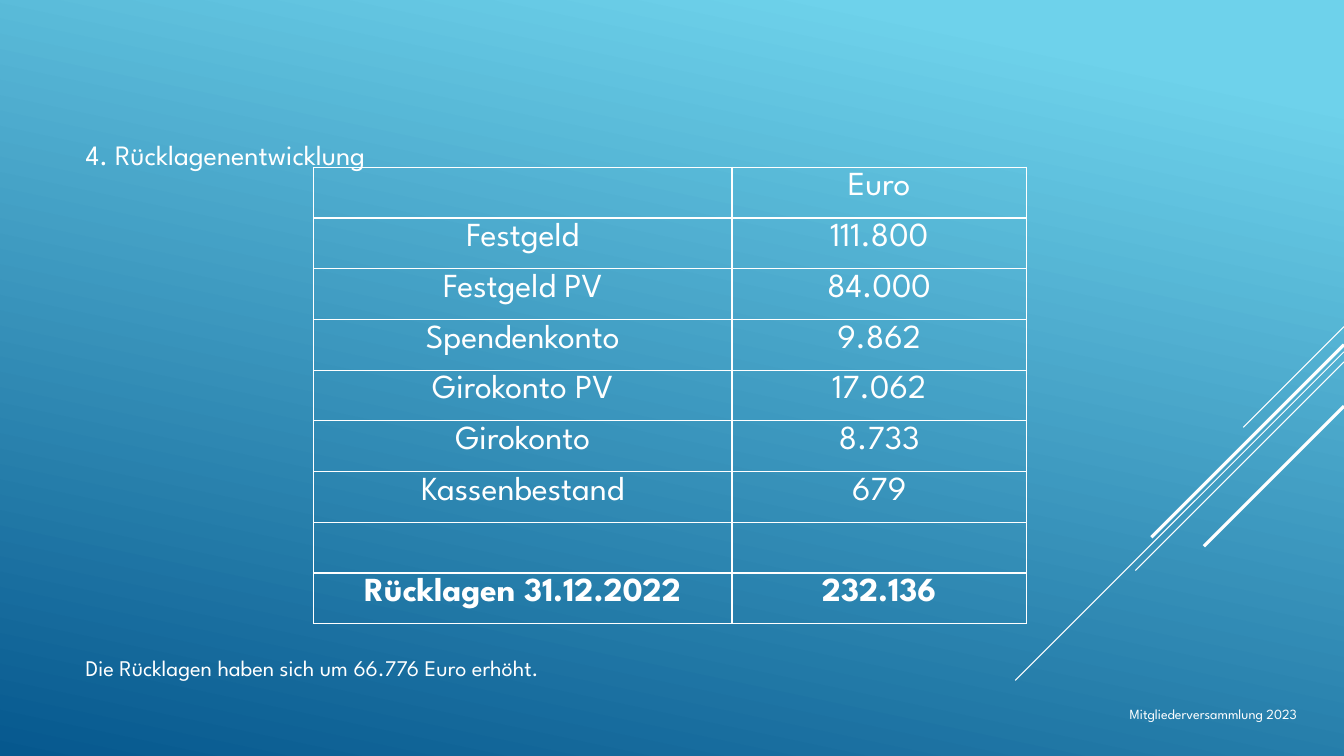
"""Build the slide on the development of reserves."""
from lxml.etree import SubElement
from pptx import Presentation
from pptx.dml.color import RGBColor as RGB
from pptx.enum.shapes import MSO_CONNECTOR as CONN
from pptx.enum.text import MSO_ANCHOR as ANCHOR, MSO_AUTO_SIZE as AUTO, PP_ALIGN as ALIGN
from pptx.oxml.ns import qn
from pptx.util import Inches, Pt

HEADING = "4. Rücklagenentwicklung"
NOTE = "Die Rücklagen haben sich um 66.776 Euro erhöht."
FOOTER = "Mitgliederversammlung 2023"
ROWS = [
    ("", "Euro"),
    ("Festgeld", "111.800"),
    ("Festgeld PV", "84.000"),
    ("Spendenkonto", "9.862"),
    ("Girokonto PV", "17.062"),
    ("Girokonto", "8.733"),
    ("Kassenbestand", "679"),
    ("", ""),
    ("Rücklagen 31.12.2022", "232.136"),
]
COL_WIDTHS = (4.15, 2.92)
TABLE_LEFT, TABLE_TOP, TABLE_HEIGHT = 3.11, 1.66, 4.53
SLIDE_W, SLIDE_H = 13.33, 7.5
STRIPES = [(3.24, 1.0, 0.75), (3.49, 3.26, 0.75), (3.59, 2.07, 0.75),
           (3.42, 1.91, 2.25), (4.03, 1.39, 2.25)]
COLORS = {"text": "FFFFFF", "line": "FFFFFF", "light": "6ED2EB", "dark": "06588E"}
FONT = "League Spartan"


def color(name):
    return RGB.from_string(COLORS[name])


def write(tf, text, size, align=ALIGN.LEFT, bold=False):
    p = tf.paragraphs[0]
    p.alignment = align
    p.space_before = Pt(0)
    r = p.add_run()
    r.text = text
    r.font.name, r.font.size, r.font.bold = FONT, Pt(size), bold
    r.font.color.rgb = color("text")
    return p


def place(sp, left, top, width, height):
    sp.left, sp.top = Inches(left), Inches(top)
    sp.width, sp.height = Inches(width), Inches(height)
    tf = sp.text_frame
    tf.word_wrap = True
    tf.auto_size = AUTO.NONE
    tf.vertical_anchor = ANCHOR.TOP
    return tf


def add_borders(cell):
    tc_pr = cell._tc.get_or_add_tcPr()
    for side in ("a:lnL", "a:lnR", "a:lnT", "a:lnB"):
        ln = SubElement(tc_pr, qn(side), w=str(Pt(1)))
        fill = SubElement(ln, qn("a:solidFill"))
        SubElement(fill, qn("a:srgbClr"), val=COLORS["line"])


def add_background(s):
    fill = s.background.fill
    fill.gradient()
    fill.gradient_angle = 258
    for stop, position, name in zip(fill.gradient_stops, (0.1, 1), ("light", "dark")):
        stop.position = position
        stop.color.rgb = color(name)


def add_stripes(s):
    for top, run, weight in STRIPES:
        line = s.shapes.add_connector(
            CONN.STRAIGHT, Inches(SLIDE_W), Inches(top),
            Inches(SLIDE_W - run), Inches(top + run))
        line.line.color.rgb = color("line")
        line.line.width = Pt(weight)
        SubElement(line._element.spPr, qn("a:effectLst"))


def add_reserves(s):
    frame = s.shapes.add_table(
        len(ROWS), len(COL_WIDTHS), Inches(TABLE_LEFT), Inches(TABLE_TOP),
        Inches(sum(COL_WIDTHS)), Inches(TABLE_HEIGHT))
    table = frame.table
    table.first_row = table.horz_banding = False
    for col, width in zip(table.columns, COL_WIDTHS):
        col.width = Inches(width)
    for i, row in enumerate(ROWS):
        for j, text in enumerate(row):
            cell = table.cell(i, j)
            add_borders(cell)
            cell.fill.background()
            if text:
                write(cell.text_frame, text, 24, ALIGN.CENTER, i == len(ROWS) - 1)


def main():
    prs = Presentation()
    prs.slide_width, prs.slide_height = Inches(SLIDE_W), Inches(SLIDE_H)
    s = prs.slides.add_slide(prs.slide_layouts[1])
    add_background(s)
    add_stripes(s)
    write(place(s.shapes.title, 0.75, 1.31, 10.32, 0.35), HEADING, 20)
    p = write(place(s.placeholders[1], 0.75, 6.44, 9.2, 0.4), NOTE, 16)
    p_pr = p._p.get_or_add_pPr()
    p_pr.set("marL", "0")
    p_pr.set("indent", "0")
    SubElement(p_pr, qn("a:buNone"))
    add_reserves(s)
    footer = s.shapes.add_textbox(0, 0, 0, 0)
    write(place(footer, 4.71, 6.95, 8.25, 0.4), FOOTER, 10, ALIGN.RIGHT)
    prs.save("out.pptx")


if __name__ == "__main__":
    main()
